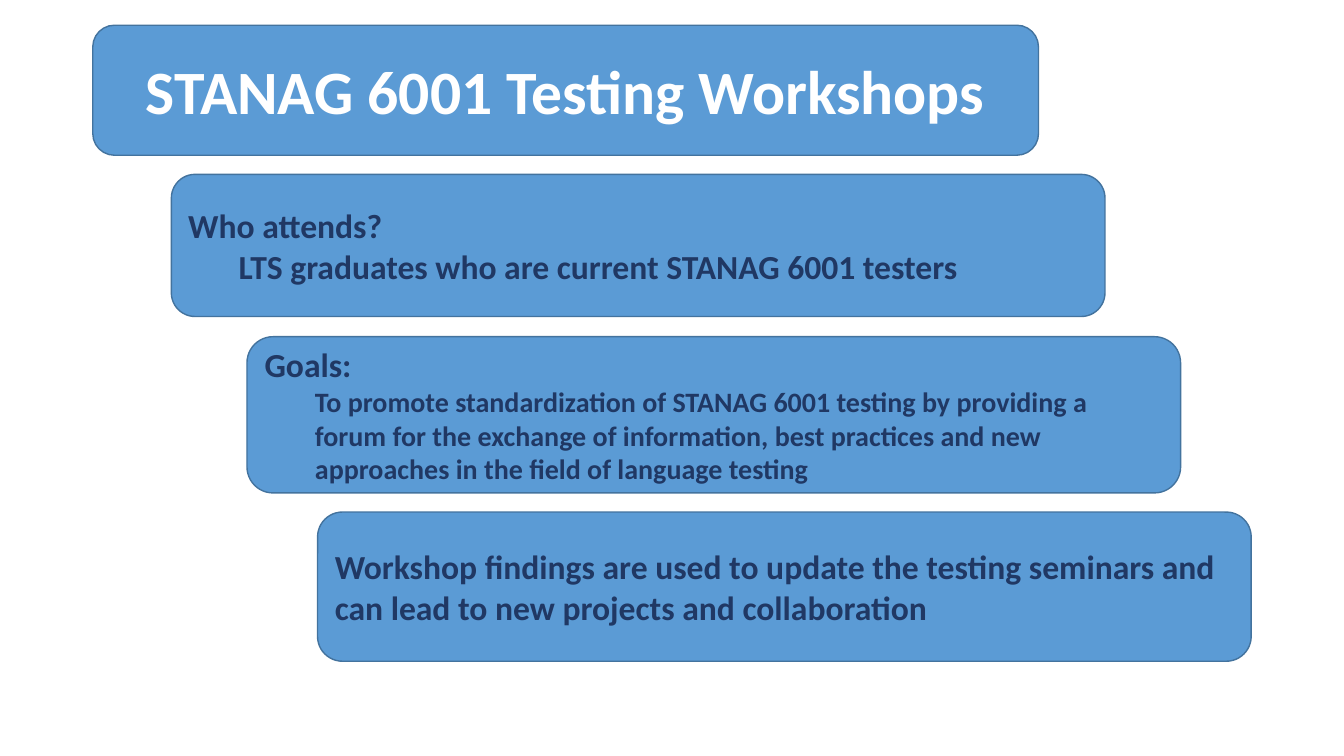
from dataclasses import dataclass

from pptx import Presentation
from pptx.dml.color import RGBColor
from pptx.enum.shapes import MSO_SHAPE
from pptx.enum.text import MSO_ANCHOR, MSO_AUTO_SIZE, PP_ALIGN
from pptx.slide import Slide
from pptx.text.text import TextFrame
from pptx.util import Emu, Pt

EMU_PER_PX = 9144
INDENT = 50
FILL, OUTLINE, NAVY, WHITE = "5B9BD5", "43739E", "203864", "FFFFFF"


@dataclass(frozen=True)
class Line:
    """One paragraph of a step."""
    text: str
    size: int = 24
    level: int = 0


@dataclass(frozen=True)
class Step:
    """One rounded box of the staircase."""
    left: int
    top: int
    width: int
    height: int
    lines: tuple[Line, ...] = ()


BANNER = Step(92, 25, 938, 129)
STEPS = (
    Step(170, 173, 926, 141, (
        Line("Who attends?"),
        Line("LTS graduates who are current STANAG 6001 testers", level=1),
    )),
    Step(245, 334, 926, 155, (
        Line("Goals:"),
        Line("To promote standardization of STANAG 6001 testing by providing a "
             "forum for the exchange of information, best practices and new "
             "approaches in the field of language testing", size=20, level=1),
    )),
    Step(315, 508, 926, 148, (
        Line("Workshop findings are used to update the testing seminars and "
             "can lead to new projects and collaboration"),
    )),
)


def px(length: int) -> Emu:
    """Turn px into EMU."""
    return Emu(length * EMU_PER_PX)


def color(code: str) -> RGBColor:
    """Turn a hex string into a colour."""
    return RGBColor.from_string(code)


def write(frame: TextFrame, text: str, *, size: int, ink: str = NAVY,
          align: PP_ALIGN = PP_ALIGN.LEFT, level: int = 0, first: bool = True) -> None:
    """Write one bold paragraph into a text frame."""
    frame.word_wrap = True
    frame.auto_size = MSO_AUTO_SIZE.NONE
    frame.vertical_anchor = MSO_ANCHOR.MIDDLE
    paragraph = frame.paragraphs[0] if first else frame.add_paragraph()
    paragraph.alignment = align
    paragraph.level = level
    properties = paragraph._p.get_or_add_pPr()
    properties.set("marL", str(px(INDENT * level)))
    properties.set("indent", "0")
    run = paragraph.add_run()
    run.text = text
    run.font.name = "Calibri"
    run.font.size = Pt(size)
    run.font.bold = True
    run.font.color.rgb = color(ink)


def draw_step(slide: Slide, step: Step) -> None:
    """Draw a rounded box with its paragraphs."""
    box = slide.shapes.add_shape(
        MSO_SHAPE.ROUNDED_RECTANGLE,
        px(step.left), px(step.top), px(step.width), px(step.height))
    box.shadow.inherit = False
    box.fill.solid()
    box.fill.fore_color.rgb = color(FILL)
    box.line.color.rgb = color(OUTLINE)
    box.line.width = Pt(1)
    for index, line in enumerate(step.lines):
        write(box.text_frame, line.text, size=line.size, level=line.level,
              first=index == 0)


def draw_title(slide: Slide) -> None:
    """Draw the banner and set the title on top of it."""
    draw_step(slide, BANNER)
    title = slide.shapes.title
    title.left, title.top = px(BANNER.left), px(BANNER.top)
    title.width, title.height = px(BANNER.width), px(BANNER.height)
    slide.shapes._spTree.append(title._element)
    write(title.text_frame, "STANAG 6001 Testing Workshops", size=44, ink=WHITE,
          align=PP_ALIGN.CENTER)


def main() -> None:
    """Build and save the slide."""
    deck = Presentation()
    deck.slide_width, deck.slide_height = px(1333), px(750)
    slide = deck.slides.add_slide(deck.slide_layouts[5])
    draw_title(slide)
    for step in STEPS:
        draw_step(slide, step)
    deck.save("out.pptx")


if __name__ == "__main__":
    main()
